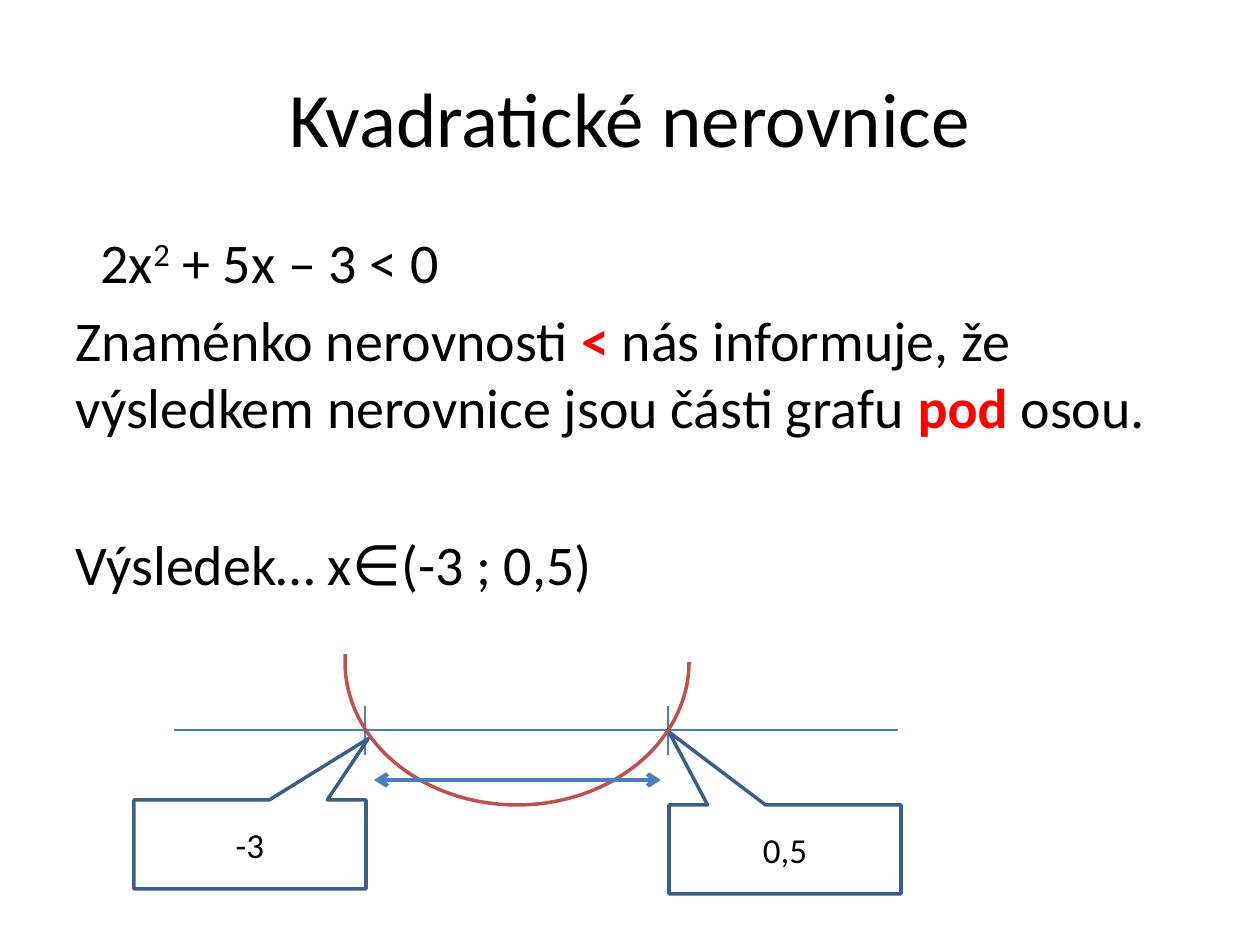
from dataclasses import dataclass

from pptx import Presentation
from pptx import util as u
from pptx.dml.color import RGBColor
from pptx.enum import shapes, text
from pptx.oxml.ns import qn
from lxml import etree

SCALE = 914400 / 126


@dataclass(frozen=True)
class Theme:
    font: str = "Calibri"
    ink: str = "000000"
    accent: str = "FF0000"
    paper: str = "FFFFFF"
    axis: str = "4B7EBC"
    border: str = "3A5F8C"
    curve: str = "C0504D"
    title: int = 44
    body: int = 32
    label: int = 20


THEME = Theme()
PLAIN = {"size": u.Pt(THEME.body), "name": THEME.font, "bold": False}
STRONG = {**PLAIN, "bold": True}
LABEL = {**PLAIN, "size": u.Pt(THEME.label)}
TITLE = {**PLAIN, "size": u.Pt(THEME.title)}

BODY = [
    (25, 0, [("2x", ""), ("2", "super"), (" + 5x – 3 < 0", "")]),
    (0, 0, [
        ("Znaménko nerovnosti ", ""),
        ("<", "strong"),
        (" nás informuje, že výsledkem nerovnice jsou části grafu ", ""),
        ("pod", "strong"),
        (" osou.", ""),
    ]),
    (0, 51, [("Výsledek… x∈(-3 ; 0,5)", "")]),
]


def px(value):
    return u.Emu(round(value * SCALE))


def place(shape, *bounds):
    for name, value in zip(("left", "top", "width", "height"), bounds):
        setattr(shape, name, px(value))


def add_span(para, words, formats, color=THEME.ink):
    span = para.add_run()
    span.text = words
    for name, value in formats.items():
        setattr(span.font, name, value)
    span.font.color.rgb = RGBColor.from_string(color)
    return span


def set_line(shape, color, width):
    shape.line.color.rgb = RGBColor.from_string(color)
    shape.line.width = u.Pt(width)


def fill_title(box):
    place(box, 63, 38, 1134, 157)
    para = box.text_frame.paragraphs[0]
    para.alignment = text.PP_ALIGN.CENTER
    add_span(para, "Kvadratické nerovnice", TITLE)


def fill_body(box):
    place(box, 63, 221, 1134, 669)
    frame = box.text_frame
    for index, (indent, gap, spans) in enumerate(BODY):
        para = frame.add_paragraph() if index else frame.paragraphs[0]
        properties = para._p.get_or_add_pPr()
        properties.set("marL", str(px(indent)))
        properties.set("indent", "0")
        if gap:
            para.space_before = u.Pt(gap)
        etree.SubElement(properties, qn("a:buNone"))
        for words, style in spans:
            strong = style == "strong"
            span = add_span(para, words, STRONG if strong else PLAIN,
                            THEME.accent if strong else THEME.ink)
            if style == "super":
                span.font._element.set("baseline", "30000")


def add_line(page, start, end, width=0.75, arrows=False):
    line = page.shapes.add_connector(
        shapes.MSO_CONNECTOR.STRAIGHT, *map(px, start + end))
    set_line(line, THEME.axis, width)
    if arrows:
        for tag in ("a:headEnd", "a:tailEnd"):
            etree.SubElement(line.line._get_or_add_ln(), qn(tag), type="arrow")
    etree.SubElement(line._element.spPr, qn("a:effectLst"))


def add_preset(page, kind, bounds, adjustments, color):
    shape = page.shapes.add_shape(kind, *map(px, bounds))
    shape.shadow.inherit = False
    for index, value in enumerate(adjustments):
        shape.adjustments[index] = value
    set_line(shape, color, 2)
    return shape


def add_callout(page, left, top, words, tip):
    box = add_preset(page, shapes.MSO_SHAPE.RECTANGULAR_CALLOUT,
                     (left, top, 232, 89), tip, THEME.border)
    box.fill.solid()
    box.fill.fore_color.rgb = RGBColor.from_string(THEME.paper)
    box.text_frame.vertical_anchor = text.MSO_ANCHOR.MIDDLE
    para = box.text_frame.paragraphs[0]
    para.alignment = text.PP_ALIGN.CENTER
    add_span(para, words, LABEL)


def add_parabola(page):
    arc = add_preset(page, shapes.MSO_SHAPE.ARC, (345, 519, 344, 286),
                     (0, 109.56), THEME.curve)
    arc.fill.background()


def main():
    deck = Presentation()
    deck.slide_width, deck.slide_height = px(1260), px(945)
    page = deck.slides.add_slide(deck.slide_layouts[1])
    fill_title(page.shapes.title)
    fill_body(page.placeholders[1])

    add_line(page, (174, 730), (898, 730))
    for root in (365, 668):
        add_line(page, (root, 706), (root, 755))
    add_callout(page, 134, 800, "-3", (0.51, -1.19))
    add_callout(page, 669, 805, "0,5", (-0.5, -1.32))
    add_parabola(page)
    add_line(page, (374, 780), (661, 780), 2.5, arrows=True)

    deck.save("out.pptx")


if __name__ == "__main__":
    main()
